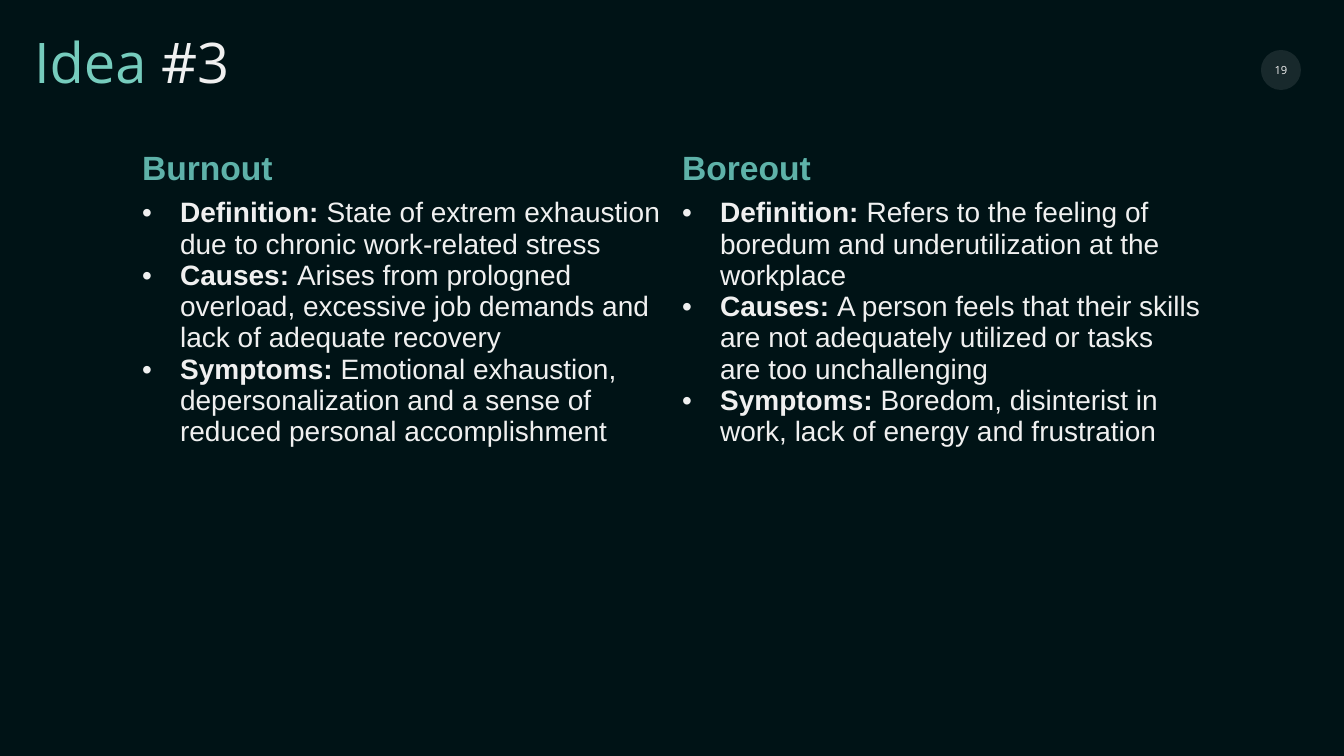
from lxml import etree
from pptx import Presentation
from pptx.dml.color import RGBColor
from pptx.enum.shapes import MSO_SHAPE
from pptx.enum.text import MSO_ANCHOR, MSO_AUTO_SIZE, PP_ALIGN
from pptx.oxml.ns import qn
from pptx.util import Pt

WIDE, HIGH = 1344, 756
PX = 12192000 / WIDE
OVAL = MSO_SHAPE.OVAL
TOP, MIDDLE = MSO_ANCHOR.TOP, MSO_ANCHOR.MIDDLE
LEFT, CENTER = PP_ALIGN.LEFT, PP_ALIGN.CENTER
NO_FIT = MSO_AUTO_SIZE.NONE
PLAIN_GRID = "{2D5ABB26-0587-4C30-8999-92F81FD0307C}"
COLORS = {"back": "001316", "text": "F0F0F0", "mint": "76CCBD", "teal": "5EB2A9"}
SANS, HEAD = "Arial", "Open Sans"

TOPICS = {
    "Burnout": [
        ("Definition: ", "State of extrem exhaustion due to chronic work-related stress"),
        ("Causes: ", "Arises from prologned overload, excessive job demands and lack of adequate recovery"),
        ("Symptoms: ", "Emotional exhaustion, depersonalization and a sense of reduced personal accomplishment"),
    ],
    "Boreout": [
        ("Definition: ", "Refers to the feeling of boredum and underutilization at the workplace"),
        ("Causes: ", "A person feels that their skills are not adequately utilized or tasks are too unchallenging"),
        ("Symptoms: ", "Boredom, disinterist in work, lack of energy and frustration"),
    ],
}


def px(count):
    return round(count * PX)


def tint(name):
    return RGBColor.from_string(COLORS[name])


class Deck:
    def __init__(self):
        self.file = Presentation()
        self.file.slide_width, self.file.slide_height = px(WIDE), px(HIGH)
        self.slide = self.file.slides.add_slide(self.file.slide_layouts[5])
        back = self.slide.background.fill
        back.solid()
        back.fore_color.rgb = tint("back")

    def style(self, para, font, size, color="text"):
        para.font.name, para.font.size = font, Pt(size)
        para.font.color.rgb = tint(color)

    def title(self, parts, x, y, w, h):
        box = self.slide.shapes.title
        box.left, box.top, box.width, box.height = map(px, (x, y, w, h))
        frame = box.text_frame
        frame.auto_size, frame.vertical_anchor = NO_FIT, TOP
        para = frame.paragraphs[0]
        para.alignment = LEFT
        self.style(para, HEAD, 40)
        for text, color in parts:
            run = para.add_run()
            run.text = text
            run.font.color.rgb = tint(color)

    def badge(self, text, x, y, size):
        """Draw a faint disc with a small centred number."""
        disc = self.slide.shapes.add_shape(OVAL, px(x), px(y), px(size), px(size))
        disc.shadow.inherit = False
        disc.line.fill.background()
        disc.fill.solid()
        disc.fill.fore_color.rgb = tint("text")
        shade = disc.fill._xPr.find(".//" + qn("a:srgbClr"))
        etree.SubElement(shade, qn("a:alpha"), val="10000")
        frame = disc.text_frame
        frame.margin_left = frame.margin_right = 0
        frame.margin_top = frame.margin_bottom = 0
        frame.vertical_anchor = MIDDLE
        para = frame.paragraphs[0]
        para.text, para.alignment = text, CENTER
        self.style(para, HEAD, 8)

    def bullet(self, para, indent):
        props = para._p.get_or_add_pPr()
        props.set("marL", str(px(indent)))
        props.set("indent", str(-px(indent)))
        color = etree.SubElement(props, qn("a:buClr"))
        etree.SubElement(color, qn("a:srgbClr"), val=COLORS["text"])
        etree.SubElement(props, qn("a:buFont"), typeface=SANS)
        etree.SubElement(props, qn("a:buChar"), char="•")

    def points(self, frame, items):
        """Fill a cell with bullets that open with a bold label."""
        for i, item in enumerate(items):
            para = frame.add_paragraph() if i else frame.paragraphs[0]
            self.bullet(para, 38)
            self.style(para, SANS, 20)
            for text, bold in zip(item, (True, False)):
                run = para.add_run()
                run.text, run.font.bold = text, bold

    def table(self, topics, x, y, wide, rows):
        count = len(topics)
        frame = self.slide.shapes.add_table(
            len(rows), count, px(x), px(y), px(wide * count), px(sum(rows)))
        table = frame.table
        table.first_row = table.horz_banding = False
        table._tbl.tblPr.find(qn("a:tableStyleId")).text = PLAIN_GRID
        for row, high in zip(table.rows, rows):
            row.height = px(high)
        for i, (name, items) in enumerate(topics.items()):
            table.columns[i].width = px(wide)
            head, body = table.cell(0, i), table.cell(1, i)
            for cell in (head, body):
                cell.fill.background()
            para = head.text_frame.paragraphs[0]
            para.text, para.font.bold = name, True
            self.style(para, SANS, 24, "teal")
            self.points(body.text_frame, items)


def main():
    deck = Deck()
    deck.badge("19", 1261, 50, 40)
    deck.table(TOPICS, 132, 145, 540, (43, 359))
    deck.title([("Idea ", "mint"), ("#3", "text")], 24, 22, 671, 78)
    deck.file.save("out.pptx")


if __name__ == "__main__":
    main()
